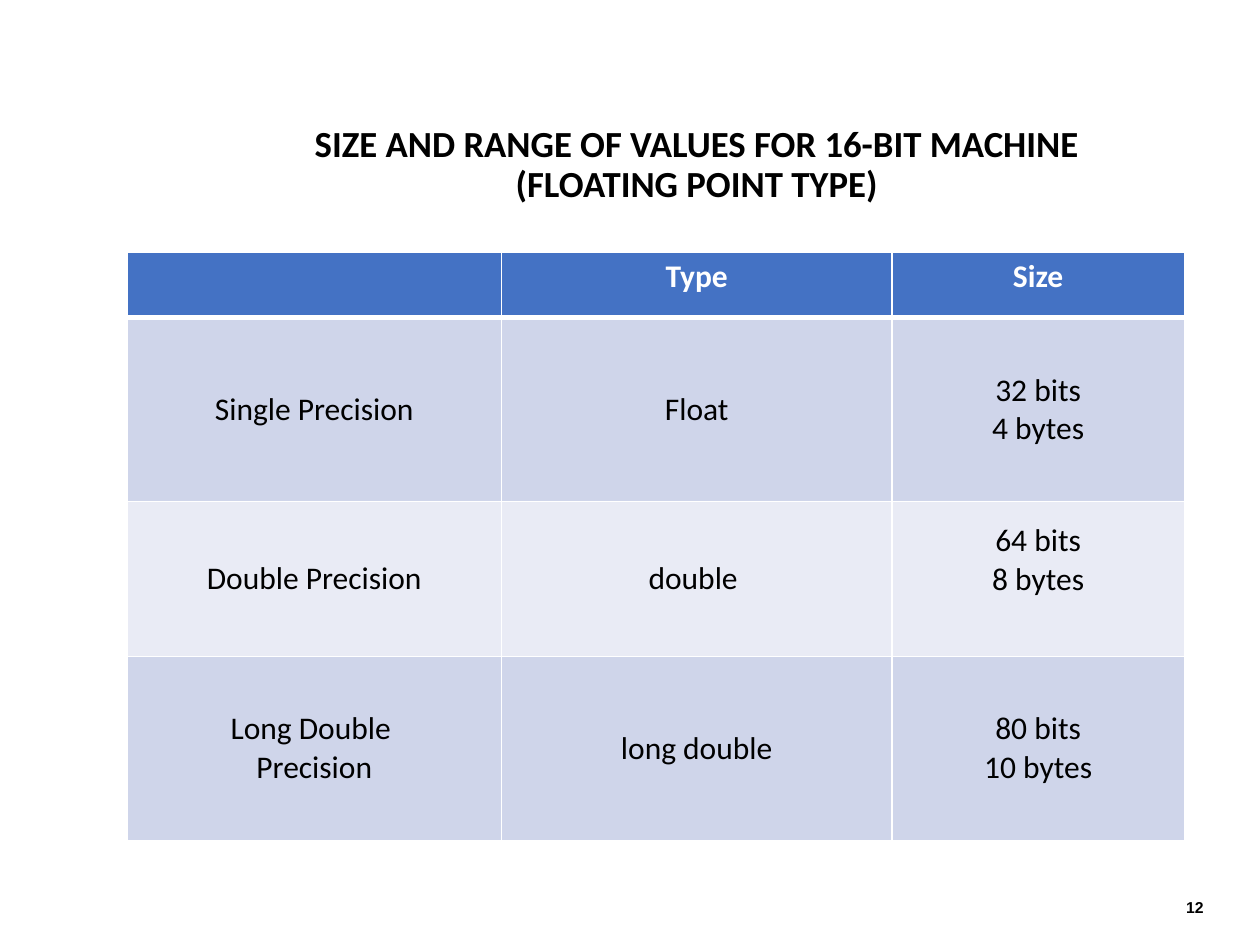
"""Build a slide with a table of floating point sizes on a 16-bit machine."""
from lxml import etree
from pptx import Presentation
from pptx.dml.color import RGBColor
from pptx.enum import text
from pptx.oxml import ns
from pptx.util import Inches, Pt

COLORS = {"black": "000000", "white": "FFFFFF", "header": "4472C4",
          "dark_band": "CFD5EA", "light_band": "E9EBF5"}


def write(frame, words, font_name, size, color, bold, align):
    frame.text = words
    for paragraph in frame.paragraphs:
        paragraph.alignment = align
        for run in paragraph.runs:
            run.font.name = font_name
            run.font.size = Pt(size)
            run.font.bold = bold
            run.font.color.rgb = RGBColor.from_string(COLORS[color])


def add_border(cell, side, width):
    line = etree.SubElement(cell._tc.get_or_add_tcPr(), ns.qn(f"a:ln{side}"), w=str(Pt(width)))
    fill = etree.SubElement(line, ns.qn("a:solidFill"))
    etree.SubElement(fill, ns.qn("a:srgbClr"), val=COLORS["white"])


prs = Presentation()
prs.slide_width, prs.slide_height = Inches(10), Inches(7.5)
slide = prs.slides.add_slide(prs.slide_layouts[6])

captions = [
    ((2.31, 0.94, 6.44, 0.75), "SIZE AND RANGE OF VALUES FOR 16-BIT MACHINE (FLOATING POINT TYPE)",
     "Calibri", 21, text.PP_ALIGN.CENTER, 0.9),
    ((6.03, 7.05, 3.62, 0.3), "12", "Arial", 9, text.PP_ALIGN.RIGHT, 1.0),
]
for place, words, font_name, size, align, spacing in captions:
    frame = slide.shapes.add_textbox(*map(Inches, place)).text_frame
    frame.word_wrap = True
    frame.vertical_anchor = text.MSO_ANCHOR.MIDDLE
    write(frame, words, font_name, size, "black", True, align)
    frame.paragraphs[0].line_spacing = spacing

precisions = [
    ["", "Type", "Size"],
    ["Single Precision", "Float", "32 bits\n4 bytes"],
    ["Double Precision", "double ", "64 bits\n8 bytes"],
    ["Long Double \nPrecision", "long double", "80 bits\n10 bytes"],
]
column_widths = [2.97, 3.1, 2.32]
row_heights = [0.52, 1.46, 1.23, 1.46]
row_fills = ["header", "dark_band", "light_band", "dark_band"]

sizes = slide.shapes.add_table(4, 3, Inches(1.01), Inches(2), Inches(8.39), Inches(4.67)).table
for column, width in zip(sizes.columns, column_widths):
    column.width = Inches(width)

for r, (row, height) in enumerate(zip(sizes.rows, row_heights)):
    row.height = Inches(height)
    is_header = r == 0
    for cell, words in zip(row.cells, precisions[r]):
        for side in "LRTB":
            under_header = (r, side) in [(0, "B"), (1, "T")]
            add_border(cell, side, 3 if under_header else 1)
        cell.fill.solid()
        cell.fill.fore_color.rgb = RGBColor.from_string(COLORS[row_fills[r]])
        cell.margin_left = cell.margin_right = Inches(0.07)
        cell.margin_top = cell.margin_bottom = Inches(0.04)
        cell.vertical_anchor = text.MSO_ANCHOR.TOP if is_header else text.MSO_ANCHOR.MIDDLE
        write(cell.text_frame, words, "Calibri", 18, "white" if is_header else "black",
              is_header, text.PP_ALIGN.CENTER)

sizes.cell(2, 2).margin_bottom = Inches(0.34)

prs.save("out.pptx")
